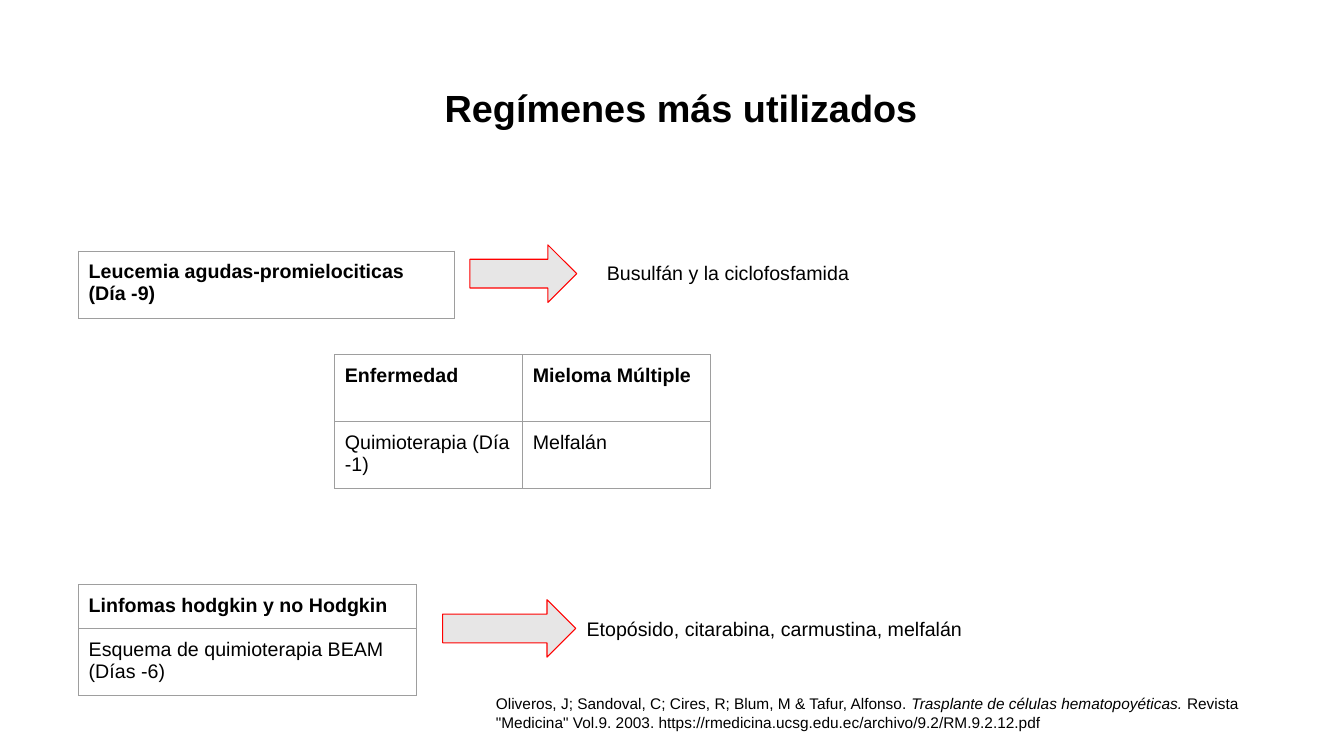
from lxml.etree import SubElement
from pptx import Presentation
from pptx.dml.color import RGBColor
from pptx.enum.shapes import MSO_SHAPE as Shape
from pptx.enum.text import MSO_ANCHOR as Anchor, MSO_AUTO_SIZE as AutoSize, PP_ALIGN as Align
from pptx.oxml.ns import qn
from pptx.util import Emu, Pt

PX = 9144  # 100 px to the inch
COLORS = {"text": "000000", "border": "9E9E9E", "arrow": "E7E6E6", "outline": "FF0000"}


def px(*lengths):
    return [Emu(length * PX) for length in lengths]


def rgb(name):
    return RGBColor.from_string(COLORS[name])


class RegimenSlide:
    font_name = "Arial"
    inset = 10
    line_width = Pt(0.75)

    def __init__(self, presentation):
        self.slide = presentation.slides.add_slide(presentation.slide_layouts[5])

    def style_font(self, font, size, bold=False, italic=False):
        font.name, font.size = self.font_name, Pt(size)
        font.bold, font.italic = bold, italic
        font.color.rgb = rgb("text")

    def set_insets(self, holder):
        """Give a text frame or a table cell the same margin on every side."""
        margin, = px(self.inset)
        holder.margin_left = holder.margin_right = margin
        holder.margin_top = holder.margin_bottom = margin
        holder.vertical_anchor = Anchor.TOP

    def title(self, wording, left, top, width, height):
        heading = self.slide.shapes.title
        heading.left, heading.top, heading.width, heading.height = px(left, top, width, height)
        frame = heading.text_frame
        frame.text = wording
        frame.word_wrap, frame.auto_size = True, AutoSize.NONE
        self.set_insets(frame)
        frame.paragraphs[0].alignment = Align.CENTER
        self.style_font(frame.paragraphs[0].runs[0].font, 27, bold=True)

    def text(self, parts, left, top, width, height, size=14):
        """Add one paragraph; every second part is italic."""
        frame = self.slide.shapes.add_textbox(*px(left, top, width, height)).text_frame
        frame.word_wrap, frame.auto_size = True, AutoSize.SHAPE_TO_FIT_TEXT
        self.set_insets(frame)
        for index, part in enumerate(parts):
            run = frame.paragraphs[0].add_run()
            run.text = part
            self.style_font(run.font, size, italic=index % 2 == 1)

    def arrow(self, left, top, width, height):
        arrow = self.slide.shapes.add_shape(Shape.RIGHT_ARROW, *px(left, top, width, height))
        arrow.shadow.inherit = False
        arrow.fill.solid()
        arrow.fill.fore_color.rgb = rgb("arrow")
        arrow.line.color.rgb = rgb("outline")
        arrow.line.width = self.line_width

    def border(self, cell):
        properties = cell._tc.get_or_add_tcPr()
        for position, side in enumerate(("lnL", "lnR", "lnT", "lnB")):
            line = SubElement(properties, qn(f"a:{side}"), w=str(self.line_width))
            fill = SubElement(line, qn("a:solidFill"))
            SubElement(fill, qn("a:srgbClr"), val=COLORS["border"])
            properties.insert(position, line)

    def table(self, rows, left, top, width, row_heights):
        """Add a bordered table with equal columns and a bold first row."""
        frame = self.slide.shapes.add_table(
            len(rows), len(rows[0]), *px(left, top, width, sum(row_heights)))
        table = frame.table
        table.first_row = table.horz_banding = False
        for row_index, (wordings, height) in enumerate(zip(rows, row_heights)):
            table.rows[row_index].height, = px(height)
            for column_index, wording in enumerate(wordings):
                cell = table.cell(row_index, column_index)
                cell.text = wording
                self.set_insets(cell)
                cell.fill.background()
                self.border(cell)
                run = cell.text_frame.paragraphs[0].runs[0]
                self.style_font(run.font, 14, bold=row_index == 0)


def main():
    presentation = Presentation()
    presentation.slide_width, presentation.slide_height = px(1333, 750)
    regimens = RegimenSlide(presentation)

    regimens.title("Regímenes más utilizados", 253, 74, 845, 66)

    regimens.table([["Leucemia agudas-promielociticas (Día -9)"]], 78, 249, 373, [67])
    regimens.arrow(466, 243, 106, 57)
    regimens.text(["Busulfán y la ciclofosfamida"], 592, 249, 460, 44)

    regimens.table([["Enfermedad", "Mieloma Múltiple"],
                    ["Quimioterapia (Día -1)", "Melfalán"]], 332, 352, 373, [66, 66])

    regimens.table([["Linfomas hodgkin y no Hodgkin"],
                    ["Esquema de quimioterapia BEAM (Días -6)"]], 78, 580, 335, [43, 67])
    regimens.arrow(439, 595, 132, 57)
    regimens.text(["Etopósido, citarabina, carmustina, melfalán"], 572, 602, 606, 44)

    regimens.text(["Oliveros, J; Sandoval, C; Cires, R; Blum, M & Tafur, Alfonso.",
                   " Trasplante de células hematopoyéticas. ",
                   'Revista "Medicina" Vol.9. 2003. '
                   "https://rmedicina.ucsg.edu.ec/archivo/9.2/RM.9.2.12.pdf"],
                  482, 679, 821, 57, size=11)

    presentation.save("out.pptx")


if __name__ == "__main__":
    main()
